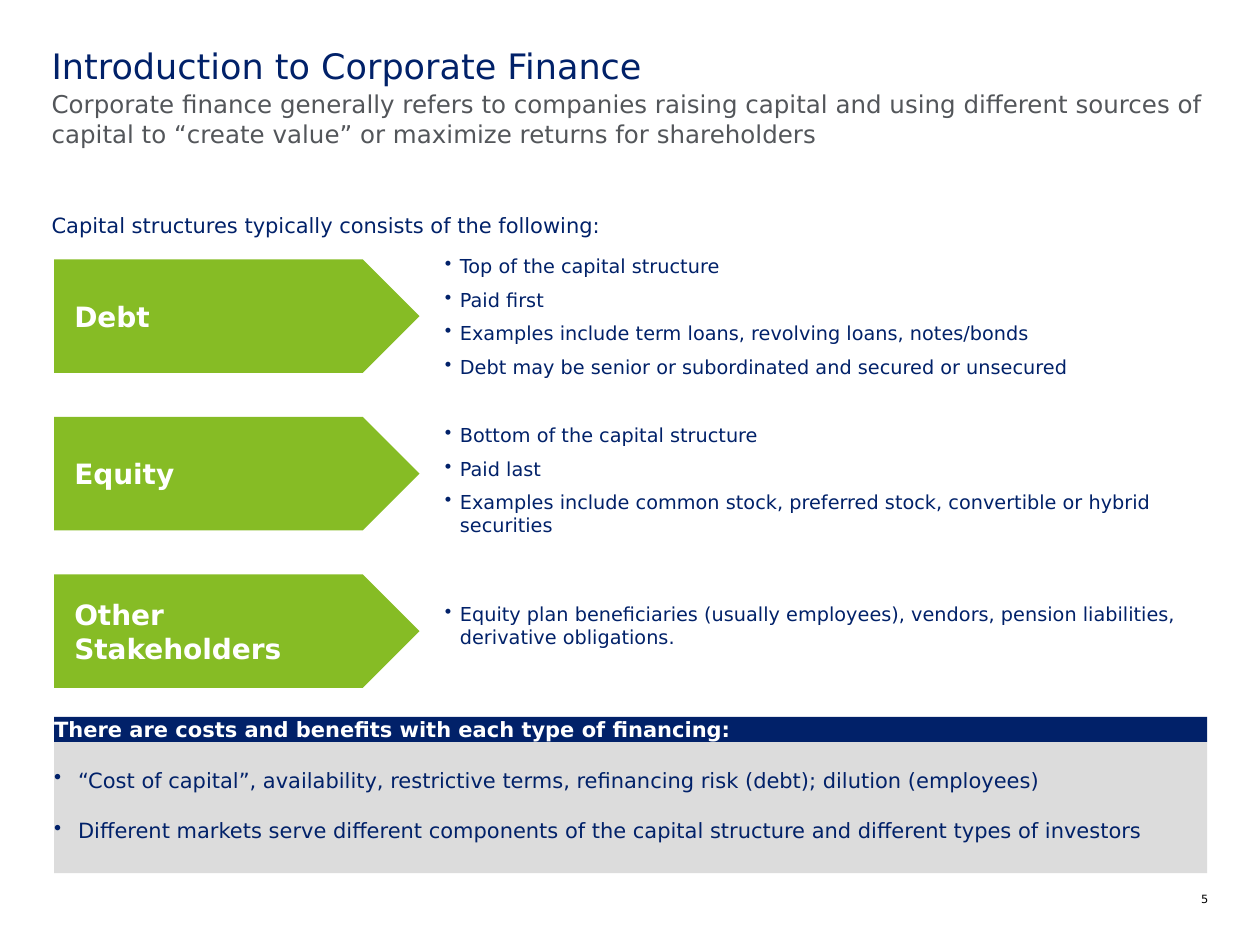
from lxml import etree
from pptx import Presentation
from pptx.dml.color import RGBColor
from pptx.enum.shapes import MSO_SHAPE as SHAPE
from pptx.enum.text import MSO_ANCHOR as ANCHOR, MSO_AUTO_SIZE as AUTO, PP_ALIGN as ALIGN
from pptx.oxml.ns import qn
from pptx.util import Inches, Pt

NAVY = RGBColor(0x01, 0x21, 0x69)
GREEN = RGBColor(0x86, 0xBC, 0x25)
GRAY = RGBColor(0xDC, 0xDC, 0xDC)
SLATE = RGBColor(0x53, 0x56, 0x5A)
WHITE = RGBColor(0xFF, 0xFF, 0xFF)
BLACK = RGBColor(0x00, 0x00, 0x00)


class SlideBuilder:
    font = "DejaVu Sans"

    def __init__(self, prs):
        self.slide = prs.slides.add_slide(prs.slide_layouts[5])

    def set_text(self, sp, lines, size, color, bold=False, align=ALIGN.LEFT,
                 anchor=ANCHOR.TOP, insets=(0, 0, 0, 0), indent=0, gap=0):
        """Fill a shape with paragraphs; an indent makes them bullets."""
        tf = sp.text_frame
        tf.word_wrap = True
        tf.auto_size = AUTO.NONE
        tf.vertical_anchor = anchor
        tf.margin_left, tf.margin_top, tf.margin_right, tf.margin_bottom = map(Inches, insets)
        tf.text = "\n".join(lines)
        for i, p in enumerate(tf.paragraphs):
            p.alignment = align
            if i and gap:
                p.space_before = Pt(gap)
            if indent:
                pPr = p._p.get_or_add_pPr()
                pPr.set("marL", str(Inches(indent)))
                pPr.set("indent", str(-Inches(indent)))
                etree.SubElement(pPr, qn("a:buChar")).set("char", "•")
            for r in p.runs:
                r.font.name = self.font
                r.font.size = Pt(size)
                r.font.bold = bold
                r.font.color.rgb = color

    def title(self, text, box):
        sp = self.slide.shapes.title
        sp.left, sp.top, sp.width, sp.height = map(Inches, box)
        self.set_text(sp, [text], 20, NAVY)

    def text(self, lines, box, size, color=NAVY, **style):
        sp = self.slide.shapes.add_textbox(*map(Inches, box))
        self.set_text(sp, lines, size, color, **style)

    def shape(self, kind, lines, box, fill, size, color, **style):
        sp = self.slide.shapes.add_shape(kind, *map(Inches, box))
        sp.shadow.inherit = False
        sp.fill.solid()
        sp.fill.fore_color.rgb = fill
        sp.line.fill.background()
        self.set_text(sp, lines, size, color, **style)


def main():
    prs = Presentation()
    prs.slide_width, prs.slide_height = Inches(10), Inches(7.5)
    s = SlideBuilder(prs)

    # Heading
    s.title("Introduction to Corporate Finance", (0.41, 0.35, 9.18, 0.37))
    s.text(["Corporate finance generally refers to companies raising capital and using "
            "different sources of capital to “create value” or maximize returns for "
            "shareholders"], (0.41, 0.71, 9.18, 0.83), 14, SLATE)
    s.text(["Capital structures typically consists of the following:"],
           (0.41, 1.69, 4.44, 0.43), 12)

    # Capital structure: arrow label, top of its bullets, bullets
    components = [
        ("Debt", 2.02, ["Top of the capital structure", "Paid first",
                        "Examples include term loans, revolving loans, notes/bonds",
                        "Debt may be senior or subordinated and secured or unsecured"]),
        ("Equity", 3.36, ["Bottom of the capital structure", "Paid last",
                          "Examples include common stock, preferred stock, convertible "
                          "or hybrid securities"]),
        ("Other Stakeholders", 4.78, ["Equity plan beneficiaries (usually employees), "
                                      "vendors, pension liabilities, derivative "
                                      "obligations."]),
    ]
    for i, (label, top, bullets) in enumerate(components):
        s.shape(SHAPE.PENTAGON, [label], (0.43, 2.06 + 1.25 * i, 2.9, 0.9), GREEN, 16, WHITE,
                bold=True, anchor=ANCHOR.MIDDLE, insets=(0.16, 0.1, 0.1, 0.1))
        s.text(bullets, (3.53, top, 6.05, 0.9), 11, indent=0.12, gap=6)

    # Costs and benefits panel
    s.shape(SHAPE.RECTANGLE, ["There are costs and benefits with each type of financing:"],
            (0.43, 5.69, 9.15, 0.2), NAVY, 12, WHITE, bold=True)
    s.shape(SHAPE.RECTANGLE,
            ["“Cost of capital”, availability, restrictive terms, refinancing risk (debt); "
             "dilution (employees)",
             "Different markets serve different components of the capital structure and "
             "different types of investors"],
            (0.43, 5.89, 9.15, 1.04), GRAY, 12, NAVY,
            insets=(0, 0.2, 0, 0), indent=0.19, gap=14.5)

    # Page number
    s.text(["5"], (9.34, 7.08, 0.25, 0.11), 6.5, BLACK, align=ALIGN.RIGHT)

    prs.save("out.pptx")


if __name__ == "__main__":
    main()
